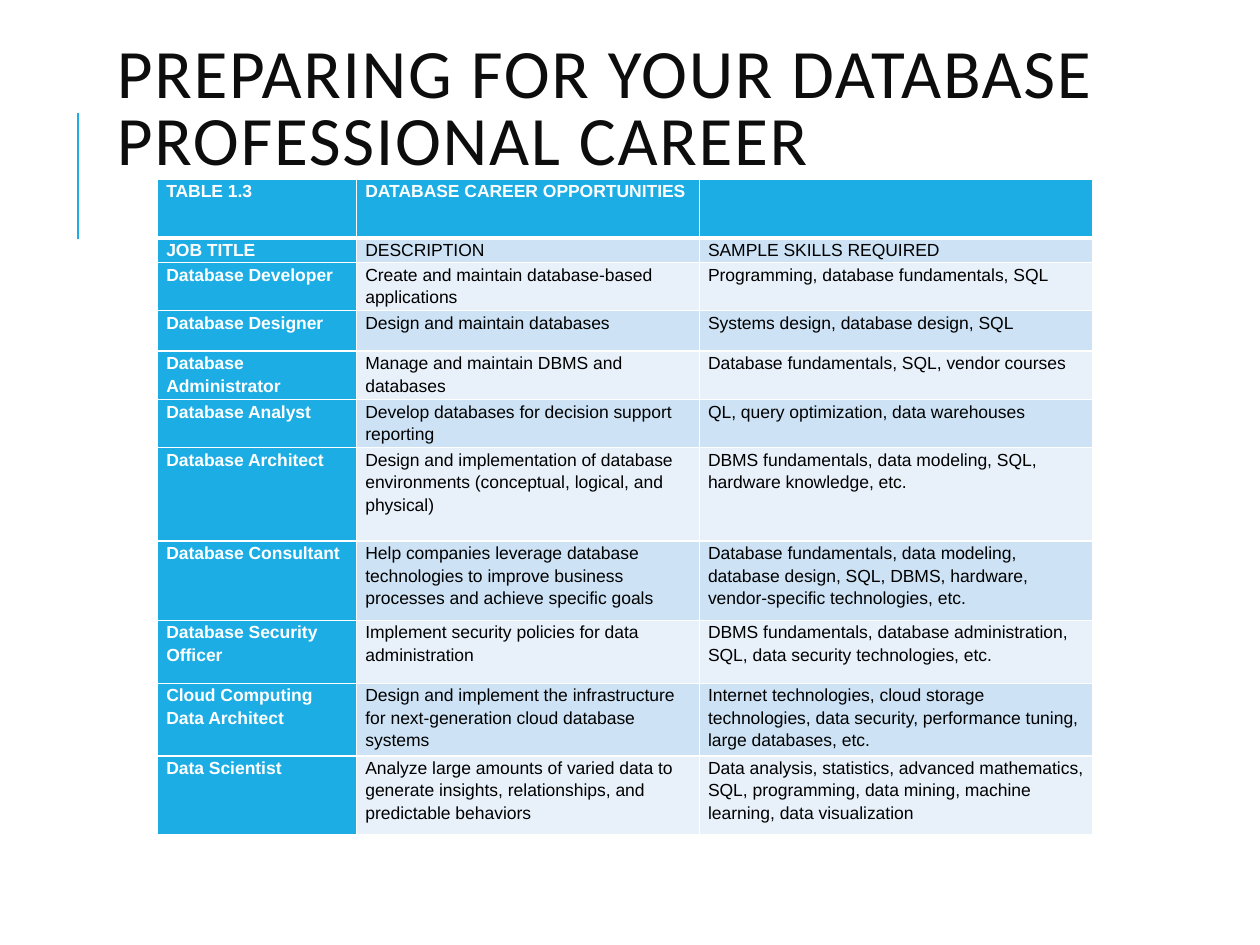
from lxml import etree
from pptx import Presentation
from pptx import util as u
from pptx.dml.color import RGBColor
from pptx.enum import shapes, text
from pptx.oxml.ns import qn

TITLE = "PREPARING FOR YOUR DATABASE PROFESSIONAL CAREER"
# Row height in inches, then the three cells
ROWS = [
    (0.47, "TABLE 1.3", "DATABASE CAREER OPPORTUNITIES", ""),
    (0.17, "JOB TITLE", "DESCRIPTION", "SAMPLE SKILLS REQUIRED"),
    (0.33, "Database Developer",
     "Create and maintain database-based applications",
     "Programming, database fundamentals, SQL"),
    (0.32, "Database Designer", "Design and maintain databases",
     "Systems design, database design, SQL"),
    (0.33, "Database Administrator",
     "Manage and maintain DBMS and databases",
     "Database fundamentals, SQL, vendor courses"),
    (0.33, "Database Analyst",
     "Develop databases for decision support reporting",
     "QL, query optimization, data warehouses"),
    (0.74, "Database Architect",
     "Design and implementation of database environments "
     "(conceptual, logical, and physical)",
     "DBMS fundamentals, data modeling, SQL, hardware knowledge, etc."),
    (0.63, "Database Consultant",
     "Help companies leverage database technologies to improve business "
     "processes and achieve specific goals",
     "Database fundamentals, data modeling, database design, SQL, DBMS, "
     "hardware, vendor-specific technologies, etc."),
    (0.5, "Database Security Officer",
     "Implement security policies for data\nadministration",
     "DBMS fundamentals, database administration, SQL, "
     "data security technologies, etc."),
    (0.5, "Cloud Computing Data Architect",
     "Design and implement the infrastructure for next-generation cloud "
     "database systems",
     "Internet technologies, cloud storage technologies, data security, "
     "performance tuning, large databases, etc."),
    (0.63, "Data Scientist",
     "Analyze large amounts of varied data to generate insights, "
     "relationships, and predictable behaviors",
     "Data analysis, statistics, advanced mathematics, SQL, programming, "
     "data mining, machine learning, data visualization"),
]
COLS = (1.58, 2.72, 3.12)

BLUE = RGBColor(0x1C, 0xAD, 0xE4)
BANDS = RGBColor(0xE8, 0xF1, 0xFA), RGBColor(0xCD, 0xE3, 0xF5)
WHITE = RGBColor(255, 255, 255)
BLACK = RGBColor(0, 0, 0)
INK = RGBColor(0x0D, 0x0D, 0x0D)


def style(font, name, size, color, bold=False):
    font.name, font.size, font.bold = name, u.Pt(size), bold
    font.color.rgb = color


def edge(cell, side, width):
    ln = etree.SubElement(cell._tc.get_or_add_tcPr(), qn("a:ln" + side),
                          w=str(u.Pt(width)))
    fill = etree.SubElement(ln, qn("a:solidFill"))
    etree.SubElement(fill, qn("a:srgbClr"), val=str(WHITE))


def dress(cell, row, col):
    head = row == 0 or col == 0
    cell.margin_left = cell.margin_right = u.Inches(0.07)
    cell.margin_top = cell.margin_bottom = 0
    # Borders: a thick rule under the top row
    for side in "LRTB":
        thick = (row, side) in ((0, "B"), (1, "T"))
        edge(cell, side, 3 if thick else 1)
    cell.fill.solid()
    cell.fill.fore_color.rgb = BLUE if head else BANDS[row % 2]
    for para in cell.text_frame.paragraphs:
        para.line_spacing = 1.15
        style(para.font, "Arial", 10, WHITE if head else BLACK, head)
        for run in para.runs:
            style(run.font, "Arial", 10, WHITE if head else BLACK, head)


deck = Presentation()
deck.slide_width, deck.slide_height = u.Inches(10), u.Inches(7.5)
slide = deck.slides.add_slide(deck.slide_layouts[6])

# Accent line
x = u.Inches(0.62)
bar = slide.shapes.add_connector(shapes.MSO_CONNECTOR.STRAIGHT,
                                 x, u.Inches(1.9), x, u.Inches(0.9))
bar.line.color.rgb = BLUE
bar.line.width = u.Pt(1.5)
etree.SubElement(bar._element.spPr, qn("a:effectLst"))

# Title
box = slide.shapes.add_textbox(u.Inches(0.83), u.Inches(0.42),
                               u.Inches(8.78), u.Inches(0.94))
frame = box.text_frame
frame.word_wrap = True
frame.vertical_anchor = text.MSO_ANCHOR.MIDDLE
frame.text = TITLE
para = frame.paragraphs[0]
para.line_spacing = 0.8
run = para.runs[0]
style(run.font, "Calibri", 39.6, INK)
run.font._element.set("spc", "100")

# Career table
table = slide.shapes.add_table(
    len(ROWS), len(COLS), u.Inches(1.25), u.Inches(1.42),
    u.Inches(sum(COLS)), u.Inches(sum(r[0] for r in ROWS))).table
for col, wide in zip(table.columns, COLS):
    col.width = u.Inches(wide)
for i, (high, *words) in enumerate(ROWS):
    table.rows[i].height = u.Inches(high)
    for j, word in enumerate(words):
        cell = table.cell(i, j)
        cell.text_frame.text = word
        dress(cell, i, j)

deck.save("out.pptx")
